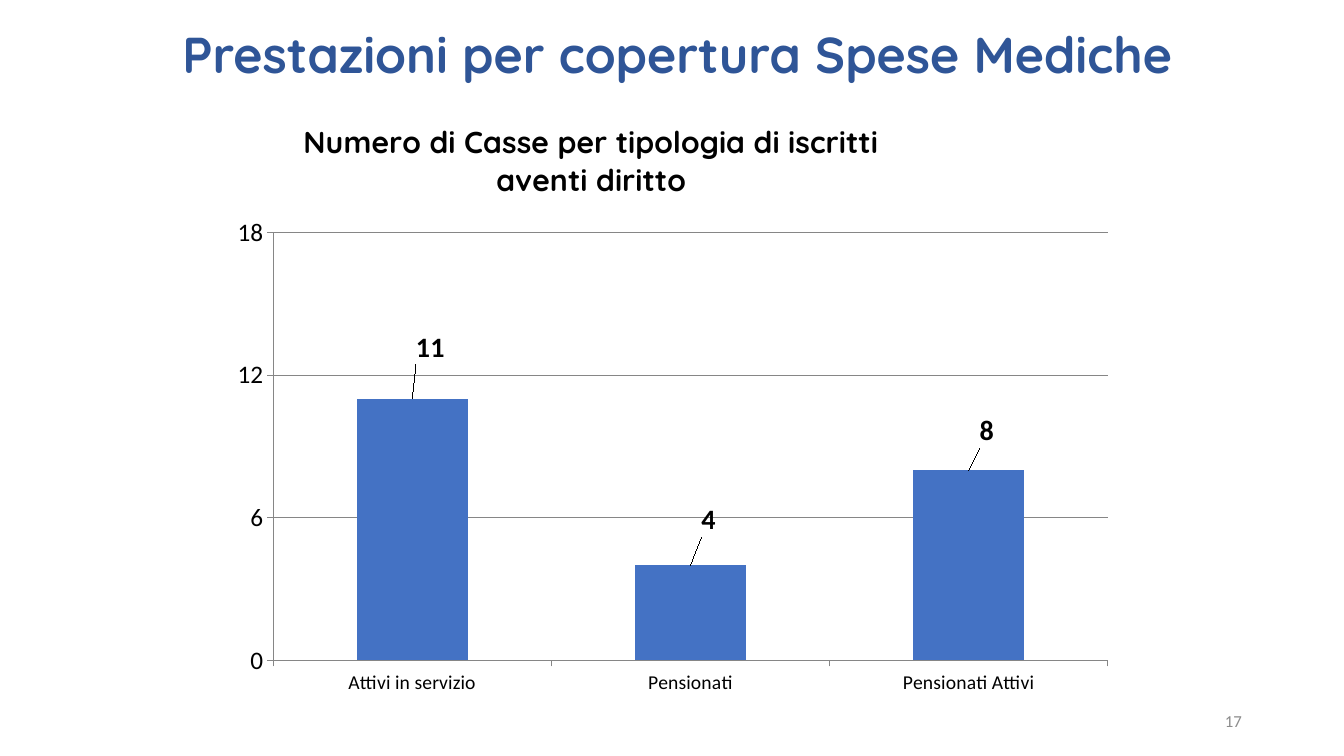
from lxml import etree
from pptx import Presentation
from pptx import util as u
from pptx.chart.data import CategoryChartData
from pptx.dml.color import RGBColor
from pptx.enum import chart as charts, text
from pptx.oxml.ns import qn

COLORS = {"heading": "2F5597", "bar": "4472C4", "ink": "000000", "grid": "868686", "number": "8C8C8C"}


class SlideBuilder:
    body_font = "Calibri"
    title_font = "Quicksand"

    def __init__(self, deck):
        self.slide = deck.slides.add_slide(deck.slide_layouts[5])

    def style(self, font, size, color, bold=False, name=None):
        font.name = name or self.body_font
        font.size = u.Pt(size)
        font.bold = bold
        font.color.rgb = RGBColor.from_string(COLORS[color])

    def fill_text(self, shape, wording, anchor, align):
        frame = shape.text_frame
        frame.word_wrap = True
        frame.auto_size = text.MSO_AUTO_SIZE.NONE
        frame.vertical_anchor = anchor
        frame.text = wording
        paragraph = frame.paragraphs[0]
        paragraph.alignment = align
        return paragraph

    def heading(self, wording, left, top, width, height):
        title = self.slide.shapes.title
        title.left, title.top, title.width, title.height = map(u.Pt, (left, top, width, height))
        paragraph = self.fill_text(title, wording, text.MSO_ANCHOR.TOP, text.PP_ALIGN.LEFT)
        paragraph.line_spacing = 0.9
        self.style(paragraph.font, 36, "heading", True, self.title_font)

    def page_number(self, wording, left, top, width, height):
        box = self.slide.shapes.add_textbox(*map(u.Pt, (left, top, width, height)))
        paragraph = self.fill_text(box, wording, text.MSO_ANCHOR.MIDDLE, text.PP_ALIGN.RIGHT)
        self.style(paragraph.font, 12, "number")

    def place(self, part, index, **settings):
        for old in part.findall(qn("c:layout")):
            part.remove(old)
        layout = etree.Element(qn("c:layout"))
        manual = etree.SubElement(layout, qn("c:manualLayout"))
        for key, value in settings.items():
            etree.SubElement(manual, qn(f"c:{key}")).set("val", str(value))
        part.insert(index, layout)

    def axis(self, axis, size):
        self.style(axis.tick_labels.font, size, "ink")
        axis.major_tick_mark = charts.XL_TICK_MARK.OUTSIDE
        axis.minor_tick_mark = charts.XL_TICK_MARK.NONE
        self.line(axis.format.line)

    def line(self, line):
        line.width = u.Pt(0.75)
        line.color.rgb = RGBColor.from_string(COLORS["grid"])

    def column_chart(self, heading, members, label_shifts, left, top, width, height):
        data = CategoryChartData()
        data.categories = list(members)
        data.add_series("Series 1", list(members.values()))
        chart = self.slide.shapes.add_chart(
            charts.XL_CHART_TYPE.COLUMN_CLUSTERED, *map(u.Pt, (left, top, width, height)), data
        ).chart
        self.style(chart.font, 18, "ink")
        chart.has_legend = False

        chart.has_title = True
        chart.chart_title.text_frame.text = heading
        for paragraph in chart.chart_title.text_frame.paragraphs:
            self.style(paragraph.font, 21.6, "ink", True, self.title_font)
        self.place(chart.chart_title._element, 1, xMode="edge", yMode="edge", x=0.09, y=0.03)

        self.axis(chart.category_axis, 14)
        counts = chart.value_axis
        self.axis(counts, 18)
        counts.minimum_scale, counts.maximum_scale, counts.major_unit = 0, 18, 6
        counts.has_major_gridlines = True
        self.line(counts.major_gridlines.format.line)

        plot = chart.plots[0]
        plot.gap_width = 150
        plot.vary_by_categories = False
        bars = plot.series[0]
        bars.format.fill.solid()
        bars.format.fill.fore_color.rgb = RGBColor.from_string(COLORS["bar"])
        bars.data_labels.show_value = True
        self.style(bars.data_labels.font, 20, "ink", True)
        for number, (x, y) in enumerate(label_shifts):
            label = bars.points[number].data_label
            self.style(label.font, 20, "ink", True)
            label.position = charts.XL_LABEL_POSITION.OUTSIDE_END
            self.place(bars.data_labels._element.findall(qn("c:dLbl"))[number], 1, x=x, y=y)

        area = chart._chartSpace.find(".//" + qn("c:plotArea"))
        self.place(area, 0, layoutTarget="inner", xMode="edge", yMode="edge",
                   x=0.06, y=0.22, w=0.92, h=0.71)


def main():
    deck = Presentation()
    deck.slide_width, deck.slide_height = u.Pt(960), u.Pt(540)
    page = SlideBuilder(deck)
    page.heading("Prestazioni per copertura Spese Mediche", 123, 18, 827, 90)
    page.column_chart(
        "Numero di Casse per tipologia di iscritti\naventi diritto",
        {"Attivi in servizio": 11, "Pensionati": 4, "Pensionati Attivi": 8},
        [(0.02, -0.05), (0.02, -0.04), (0.02, -0.03)],
        156.2, 71.3, 648, 430.6,
    )
    page.page_number("17", 678.2, 500.4, 216, 28.8)
    deck.save("out.pptx")


if __name__ == "__main__":
    main()
